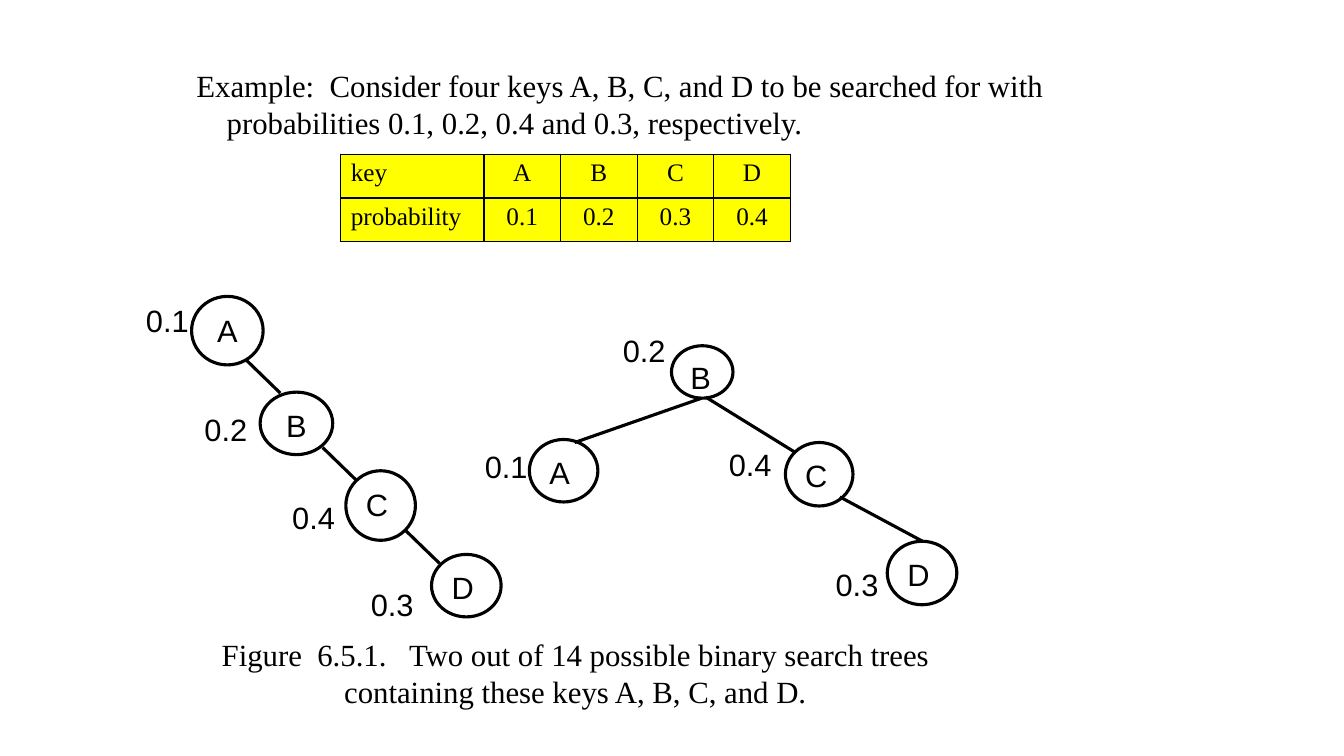
from dataclasses import dataclass

from lxml import etree
from pptx import Presentation
from pptx.dml.color import RGBColor
from pptx.enum.shapes import MSO_CONNECTOR, MSO_SHAPE
from pptx.enum.text import MSO_ANCHOR, PP_ALIGN
from pptx.oxml.ns import qn
from pptx.util import Inches, Pt

LEFT, CENTER = PP_ALIGN.LEFT, PP_ALIGN.CENTER
TOP = MSO_ANCHOR.TOP
ELLIPSE = MSO_SHAPE.OVAL
STRAIGHT = MSO_CONNECTOR.STRAIGHT


@dataclass(frozen=True)
class Theme:
    ink: RGBColor = RGBColor(0, 0, 0)
    paper: RGBColor = RGBColor(255, 255, 255)
    cell: RGBColor = RGBColor(255, 255, 0)
    serif: str = "Times New Roman"
    sans: str = "Arial"
    body: Pt = Pt(22)
    table: Pt = Pt(18)
    stroke: Pt = Pt(2.25)
    border: Pt = Pt(1)


THEME = Theme()

# Node: key, left, top, width, height, alignment (inside the tree's box)
# Label: probability, left, top; edge: from x, y to x, y
CHAIN = {
    "nodes": [
        ("A", 0.55, 0, 0.71, 0.68, CENTER),
        ("B", 1.23, 0.95, 0.72, 0.62, CENTER),
        ("C", 2.08, 1.73, 0.69, 0.69, LEFT),
        ("D", 2.93, 2.56, 0.69, 0.62, LEFT),
    ],
    "edges": [(1.09, 0.63, 1.43, 0.96), (1.85, 1.5, 2.19, 1.83),
              (2.67, 2.32, 3.01, 2.65)],
    "labels": [("0.1", 0, 0), ("0.2", 0.58, 1.09), ("0.4", 1.45, 1.96),
               ("0.3", 2.23, 2.82)],
}
BRANCHED = {
    "nodes": [
        ("B", 1.95, 0.19, 0.61, 0.52, LEFT),
        ("A", 0.54, 1.12, 0.68, 0.62, LEFT),
        ("C", 3.08, 1.15, 0.67, 0.63, LEFT),
        ("D", 4.09, 2.13, 0.69, 0.63, LEFT),
    ],
    "edges": [(2.25, 0.71, 0.99, 1.15), (2.29, 0.7, 3.18, 1.25),
              (3.62, 1.69, 4.44, 2.13)],
    "labels": [("0.2", 1.37, 0), ("0.1", 0, 1.15), ("0.4", 2.42, 1.13),
               ("0.3", 3.48, 2.32)],
}
KEY_ROWS = [("key", "A", "B", "C", "D"),
            ("probability", "0.1", "0.2", "0.3", "0.4")]


def write(tf, text, font, size, align=LEFT):
    tf.text = text
    p = tf.paragraphs[0]
    p.alignment = align
    for r in p.runs:
        r.font.name, r.font.size = font, size
        r.font.color.rgb = THEME.ink
    return p


def add_text(s, box, text, font, align=LEFT, wrap=True):
    tf = s.shapes.add_textbox(*map(Inches, box)).text_frame
    tf.word_wrap = wrap
    return write(tf, text, font, THEME.body, align)


def add_statement(s, box):
    p = add_text(s, box, "Example:  Consider four keys A, B, C, and D to be searched "
                 "for with probabilities 0.1, 0.2, 0.4 and 0.3, respectively.",
                 THEME.serif)
    hang = Inches(0.3)
    pPr = p._p.get_or_add_pPr()
    pPr.set("marL", str(hang))
    pPr.set("indent", str(-hang))


def add_borders(cell):
    tcPr = cell._tc.get_or_add_tcPr()
    for i, side in enumerate(("lnL", "lnR", "lnT", "lnB")):
        ln = etree.Element(qn(f"a:{side}"), w=str(THEME.border))
        fill = etree.SubElement(ln, qn("a:solidFill"))
        etree.SubElement(fill, qn("a:srgbClr"), val=str(THEME.ink))
        tcPr.insert(i, ln)


def add_key_table(s, box):
    left, top, width, height = box
    table = s.shapes.add_table(len(KEY_ROWS), len(KEY_ROWS[0]),
                               *map(Inches, (left, top, width, height))).table
    head_width = 1.42
    key_width = (width - head_width) / (len(KEY_ROWS[0]) - 1)
    for c, column in enumerate(table.columns):
        column.width = Inches(key_width if c else head_width)
    for r, values in enumerate(KEY_ROWS):
        for c, value in enumerate(values):
            cell = table.cell(r, c)
            write(cell.text_frame, value, THEME.serif, THEME.table,
                  CENTER if c else LEFT)
            cell.fill.solid()
            cell.fill.fore_color.rgb = THEME.cell
            add_borders(cell)


def add_node(s, box, key, align):
    sp = s.shapes.add_shape(ELLIPSE, *map(Inches, box))
    sp.shadow.inherit = False
    sp.fill.solid()
    sp.fill.fore_color.rgb = THEME.paper
    sp.line.color.rgb = THEME.ink
    sp.line.width = THEME.stroke
    sp.text_frame.vertical_anchor = TOP
    write(sp.text_frame, key, THEME.sans, THEME.body, align)


def add_edge(s, ends):
    line = s.shapes.add_connector(STRAIGHT, *map(Inches, ends))
    line.line.color.rgb = THEME.ink
    line.line.width = THEME.stroke
    etree.SubElement(line._element.spPr, qn("a:effectLst"))


def add_tree(s, left, top, tree):
    """Place nodes, edges and probabilities relative to the tree's corner."""
    for key, x, y, w, h, align in tree["nodes"]:
        add_node(s, (left + x, top + y, w, h), key, align)
    for x1, y1, x2, y2 in tree["edges"]:
        add_edge(s, (left + x1, top + y1, left + x2, top + y2))
    for value, x, y in tree["labels"]:
        add_text(s, (left + x, top + y, 0.63, 0.47), value, THEME.sans, wrap=False)


def add_caption(s, box):
    add_text(s, box, "Figure  6.5.1.   Two out of 14 possible binary search trees "
             "containing these keys A, B, C, and D.", THEME.serif, CENTER)


def main():
    prs = Presentation()
    prs.slide_width, prs.slide_height = Inches(13.33), Inches(7.5)
    s = prs.slides.add_slide(prs.slide_layouts[6])
    add_statement(s, (1.85, 0.61, 9.72, 0.84))
    add_key_table(s, (3.38, 1.53, 4.46, 0.87))
    add_tree(s, 1.35, 2.94, CHAIN)
    add_tree(s, 4.71, 3.24, BRANCHED)
    add_caption(s, (2.05, 6.26, 7.31, 0.84))
    prs.save("out.pptx")


if __name__ == "__main__":
    main()
